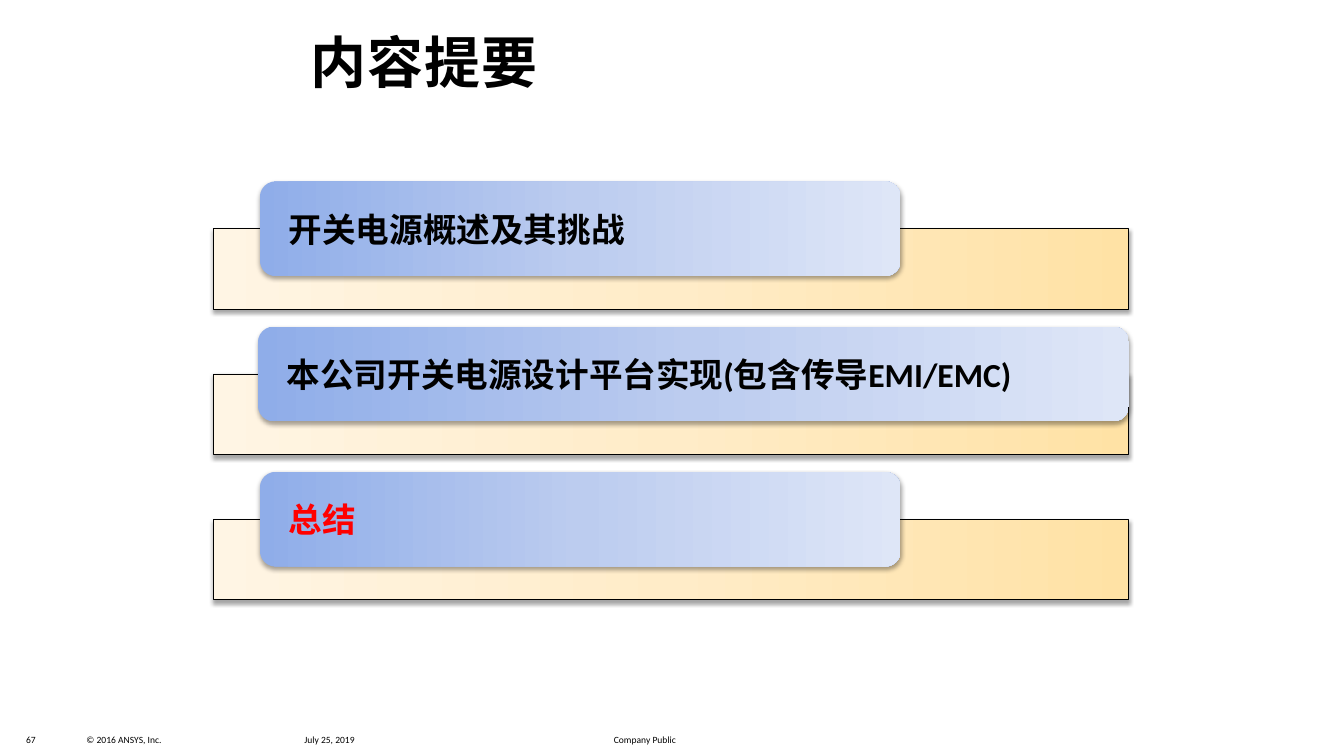
from lxml import etree
from pptx import Presentation
from pptx.dml.color import RGBColor
from pptx.enum import shapes, text
from pptx.oxml import ns
from pptx.util import Cm, Pt

# Content
TITLE = "内容提要"
# (text, text colour, pill left, pill width)
TOPICS = [
    ("开关电源概述及其挑战", "000000", 6.55, 16.15),
    ("本公司开关电源设计平台实现(包含传导EMI/EMC)", "000000", 6.5, 21.95),
    ("总结", "FF0000", 6.55, 16.15),
]
# (text, left, width)
FOOTER = [
    ("67", 0.66, 1.04),
    ("© 2016 ANSYS, Inc.", 2.18, 5.49),
    ("July 25, 2019", 7.67, 7.5),
    ("Company Public", 15.47, 15.32),
]

# Formats
BAR_COLOURS = ["FFF5E4", "FFECC8", "FFE2A5"]
PILL_COLOURS = ["8FADE9", "BCCCEF", "DEE6F7"]
BAR_LEFT, BAR_TOP, BAR_WIDTH, BAR_HEIGHT = 5.38, 5.77, 23.06, 2.03
PILL_TOP, PILL_HEIGHT, PITCH = 4.57, 2.39, 3.66
CJK_FONT = "Noto Sans CJK SC"
TITLE_FONT = {"name": CJK_FONT, "size": Pt(40), "bold": True}
TOPIC_FONT = {"name": "Calibri", "size": Pt(24), "bold": True}
FOOTER_FONT = {"name": "Calibri", "size": Pt(6.8)}


def rgb(value):
    return RGBColor.from_string(value)


def add_xml(parent, tag, **attrs):
    return etree.SubElement(parent, ns.qn(tag), attrs)


def write(sp, words, font, colour="000000", inset=0.0,
          anchor=text.MSO_ANCHOR.TOP):
    tf = sp.text_frame
    frame = {"word_wrap": True, "vertical_anchor": anchor,
             "margin_left": Cm(inset), "margin_right": Cm(inset),
             "margin_top": 0, "margin_bottom": 0}
    for name, value in frame.items():
        setattr(tf, name, value)
    p = tf.paragraphs[0]
    p.alignment = text.PP_ALIGN.LEFT
    r = p.add_run()
    r.text = words
    for name, value in font.items():
        setattr(r.font, name, value)
    r.font.color.rgb = rgb(colour)
    add_xml(r.font._element, "a:ea", typeface=CJK_FONT)
    return p


def add_box(s, box, words, font, **options):
    return write(s.shapes.add_textbox(*map(Cm, box)), words, font, **options)


def add_panel(s, kind, box, colours):
    sp = s.shapes.add_shape(kind, *map(Cm, box))
    # Even gradient from left to right
    sp.fill.gradient()
    sp.fill.gradient_angle = 0
    props = sp._element.spPr
    stops = props.find(".//" + ns.qn("a:gsLst"))
    stops.clear()
    for i, colour in enumerate(colours):
        gs = add_xml(stops, "a:gs", pos=str(100000 * i // (len(colours) - 1)))
        add_xml(gs, "a:srgbClr", val=colour)
    sp.line.fill.background()
    # Soft shadow below
    sp.shadow.inherit = False
    shadow = add_xml(props.find(ns.qn("a:effectLst")), "a:outerShdw",
                     blurRad=str(Pt(3.1)), dist=str(Pt(1.8)),
                     dir="5400000", rotWithShape="0")
    black = add_xml(shadow, "a:srgbClr", val="000000")
    add_xml(black, "a:alpha", val="35000")
    return sp


def main():
    prs = Presentation()
    prs.slide_width, prs.slide_height = Cm(33.87), Cm(19.05)
    s = prs.slides.add_slide(prs.slide_layouts[6])

    # Footer
    for words, left, width in FOOTER:
        add_box(s, (left, 18.49, width, 0.28), words, FOOTER_FONT)

    # Topics: a bar with a pill over it
    for i, (words, colour, left, width) in enumerate(TOPICS):
        shift = i * PITCH
        bar = add_panel(s, shapes.MSO_SHAPE.RECTANGLE,
                        (BAR_LEFT, BAR_TOP + shift, BAR_WIDTH, BAR_HEIGHT),
                        BAR_COLOURS)
        bar.line.color.rgb = rgb("000000")
        bar.line.width = Pt(0.75)
        pill = add_panel(s, shapes.MSO_SHAPE.ROUNDED_RECTANGLE,
                         (left, PILL_TOP + shift, width, PILL_HEIGHT),
                         PILL_COLOURS)
        write(pill, words, TOPIC_FONT, colour=colour, inset=0.61,
              anchor=text.MSO_ANCHOR.MIDDLE)

    # Title
    p = add_box(s, (7.82, 0.71, 19.79, 1.7), TITLE, TITLE_FONT,
                anchor=text.MSO_ANCHOR.BOTTOM)
    p.line_spacing = 0.9
    p.runs[0].font._element.set("spc", "80")

    prs.save("out.pptx")


if __name__ == "__main__":
    main()
